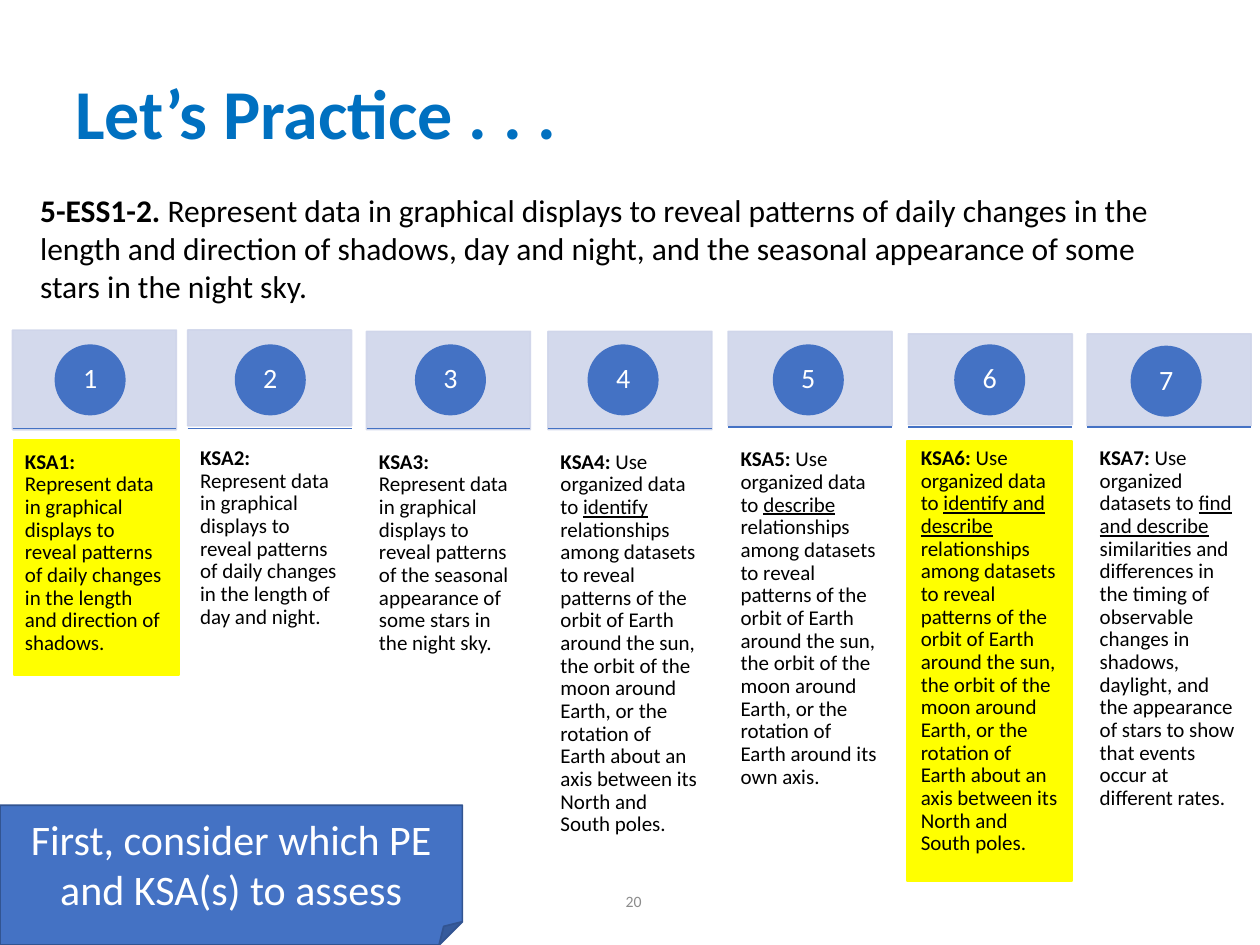
"""Build the "Let's Practice" slide with seven numbered KSA columns."""
from dataclasses import dataclass

from lxml.etree import SubElement
from pptx import Presentation
from pptx.dml.color import RGBColor
from pptx.enum.shapes import MSO_CONNECTOR, MSO_SHAPE
from pptx.enum.text import MSO_ANCHOR, PP_ALIGN
from pptx.oxml.ns import qn
from pptx.util import Inches, Pt

BLACK = RGBColor(0x00, 0x00, 0x00)
WHITE = RGBColor(0xFF, 0xFF, 0xFF)
GRAY = RGBColor(0x8C, 0x8C, 0x8C)
TITLE_BLUE = RGBColor(0x00, 0x70, 0xC0)
BLUE = RGBColor(0x44, 0x72, 0xC4)
DARK_BLUE = RGBColor(0x32, 0x54, 0x91)
PALE_BLUE = RGBColor(0xCF, 0xD5, 0xEA)
YELLOW = RGBColor(0xFF, 0xFF, 0x00)
FONT = "Calibri"
COLUMN_WIDTH = 1.3
CIRCLE_SIZE = 0.55


@dataclass(frozen=True)
class Run:
    text: str
    bold: bool = False
    underline: bool = False


@dataclass(frozen=True)
class Column:
    left: float
    band_top: float
    band_height: float
    circle_left: float
    circle_top: float
    rule_top: float
    text_top: float
    text_height: float
    before: str
    underlined: str = ""
    after: str = ""


@dataclass(frozen=True)
class Highlight:
    left: float
    top: float
    width: float
    height: float


GRAPHICAL = " Represent data in graphical displays to reveal patterns of "
ORGANIZED = " Use organized data to "
ORBITS = (" relationships among datasets to reveal patterns of the orbit of Earth around the sun, "
          "the orbit of the moon around Earth, or the rotation of Earth ")
POLES = ORBITS + "about an axis between its North and South poles."
TIMING = ("similarities and differences in the timing of observable changes in shadows, daylight, "
          "and the appearance of stars to show that events occur at different rates.")

COLUMNS = [
    Column(0.1, 2.62, 0.79, 0.44, 2.74, 3.4, 3.58, 1.65,
           GRAPHICAL + "daily changes in the length and direction of shadows."),
    Column(1.49, 2.62, 0.76, 1.87, 2.74, 3.4, 3.55, 1.47,
           GRAPHICAL + "daily changes in the length of day and night."),
    Column(2.91, 2.63, 0.78, 3.3, 2.74, 3.4, 3.58, 1.65,
           GRAPHICAL + "the seasonal appearance of some stars in the night sky."),
    Column(4.35, 2.63, 0.78, 4.67, 2.74, 3.4, 3.58, 3.12, ORGANIZED, "identify", POLES),
    Column(5.78, 2.63, 0.75, 6.14, 2.74, 3.39, 3.56, 2.75,
           ORGANIZED, "describe", ORBITS + "around its own axis."),
    Column(7.21, 2.65, 0.72, 7.58, 2.74, 3.39, 3.55, 3.3,
           ORGANIZED, "identify and describe", POLES),
    Column(8.63, 2.65, 0.73, 8.98, 2.75, 3.39, 3.55, 2.93,
           " Use organized datasets to ", "find and describe ", TIMING),
]
HIGHLIGHTS = [Highlight(0.11, 3.49, 1.31, 1.87), Highlight(7.2, 3.5, 1.31, 3.49)]


def add_box(slide, kind, left: float, top: float, width: float, height: float,
            fill: RGBColor, line: RGBColor):
    shape = slide.shapes.add_shape(kind, Inches(left), Inches(top), Inches(width), Inches(height))
    shape.shadow.inherit = False
    shape.fill.solid()
    shape.fill.fore_color.rgb = fill
    shape.line.color.rgb = line
    shape.line.width = Pt(1)
    return shape


def write(shape, runs: list[Run], size: float, color: RGBColor, align=PP_ALIGN.LEFT,
          anchor=MSO_ANCHOR.TOP, spacing: float = 1.0) -> None:
    frame = shape.text_frame
    frame.word_wrap = True
    frame.vertical_anchor = anchor
    paragraph = frame.paragraphs[0]
    paragraph.alignment = align
    paragraph.line_spacing = spacing
    font = paragraph.font
    font.name, font.size, font.color.rgb = FONT, Pt(size), color
    for item in runs:
        run = paragraph.add_run()
        run.text = item.text
        if item.bold:
            run.font.bold = True
        if item.underline:
            run.font.underline = True


def add_text(slide, left: float, top: float, width: float, height: float):
    return slide.shapes.add_textbox(Inches(left), Inches(top), Inches(width), Inches(height))


def add_rule(slide, left: float, top: float, width: float) -> None:
    rule = slide.shapes.add_connector(MSO_CONNECTOR.STRAIGHT, Inches(left), Inches(top),
                                      Inches(left + width), Inches(top))
    rule.line.color.rgb = BLUE
    rule.line.width = Pt(1)
    SubElement(rule._element.spPr, qn("a:effectLst"))


def add_column(slide, number: int, column: Column) -> None:
    band = add_box(slide, MSO_SHAPE.RECTANGLE, column.left, column.band_top,
                   COLUMN_WIDTH, column.band_height, PALE_BLUE, PALE_BLUE)
    for color in band._element.spPr.iter(qn("a:srgbClr")):
        SubElement(color, qn("a:alpha"), val="90000")

    text = add_text(slide, column.left, column.text_top, COLUMN_WIDTH, column.text_height)
    text.text_frame.margin_top = text.text_frame.margin_bottom = 0
    runs = [Run(f"KSA{number}:", bold=True), Run(column.before)]
    if column.underlined:
        runs += [Run(column.underlined, underline=True), Run(column.after)]
    write(text, runs, 12, BLACK, spacing=0.9)

    circle = add_box(slide, MSO_SHAPE.OVAL, column.circle_left, column.circle_top,
                     CIRCLE_SIZE, CIRCLE_SIZE, BLUE, BLUE)
    frame = circle.text_frame
    frame.margin_left = frame.margin_right = Inches(0.04)
    frame.margin_top = frame.margin_bottom = Inches(0.01)
    write(circle, [Run(str(number))], 16, WHITE, PP_ALIGN.CENTER, MSO_ANCHOR.MIDDLE, 0.9)

    add_rule(slide, column.left, column.rule_top, COLUMN_WIDTH)


def main() -> None:
    presentation = Presentation()
    presentation.slide_width, presentation.slide_height = Inches(10), Inches(7.5)
    slide = presentation.slides.add_slide(presentation.slide_layouts[6])

    write(add_text(slide, 2.94, 6.95, 2.25, 0.4), [Run("20")], 9, GRAY,
          PP_ALIGN.RIGHT, MSO_ANCHOR.MIDDLE)
    for area in HIGHLIGHTS:
        add_box(slide, MSO_SHAPE.RECTANGLE, area.left, area.top, area.width, area.height,
                YELLOW, YELLOW)
    write(add_text(slide, 0.5, 0.3, 9, 1.25), [Run("Let’s Practice . . .", bold=True)],
          40, TITLE_BLUE, anchor=MSO_ANCHOR.MIDDLE, spacing=0.9)
    write(add_text(slide, 0.22, 1.47, 9, 1.01),
          [Run("5-ESS1-2. ", bold=True),
           Run("Represent data in graphical displays to reveal patterns of daily changes in the "
               "length and direction of shadows, day and night, and the seasonal appearance of "
               "some stars in the night sky.")], 18, BLACK)
    for number, column in enumerate(COLUMNS, start=1):
        add_column(slide, number, column)

    note = add_box(slide, MSO_SHAPE.FOLDED_CORNER, 0, 6.39, 3.67, 1.11, BLUE, DARK_BLUE)
    write(note, [Run("First, consider which PE and KSA(s) to assess")], 24, WHITE,
          PP_ALIGN.CENTER, MSO_ANCHOR.MIDDLE)
    presentation.save("out.pptx")


if __name__ == "__main__":
    main()
